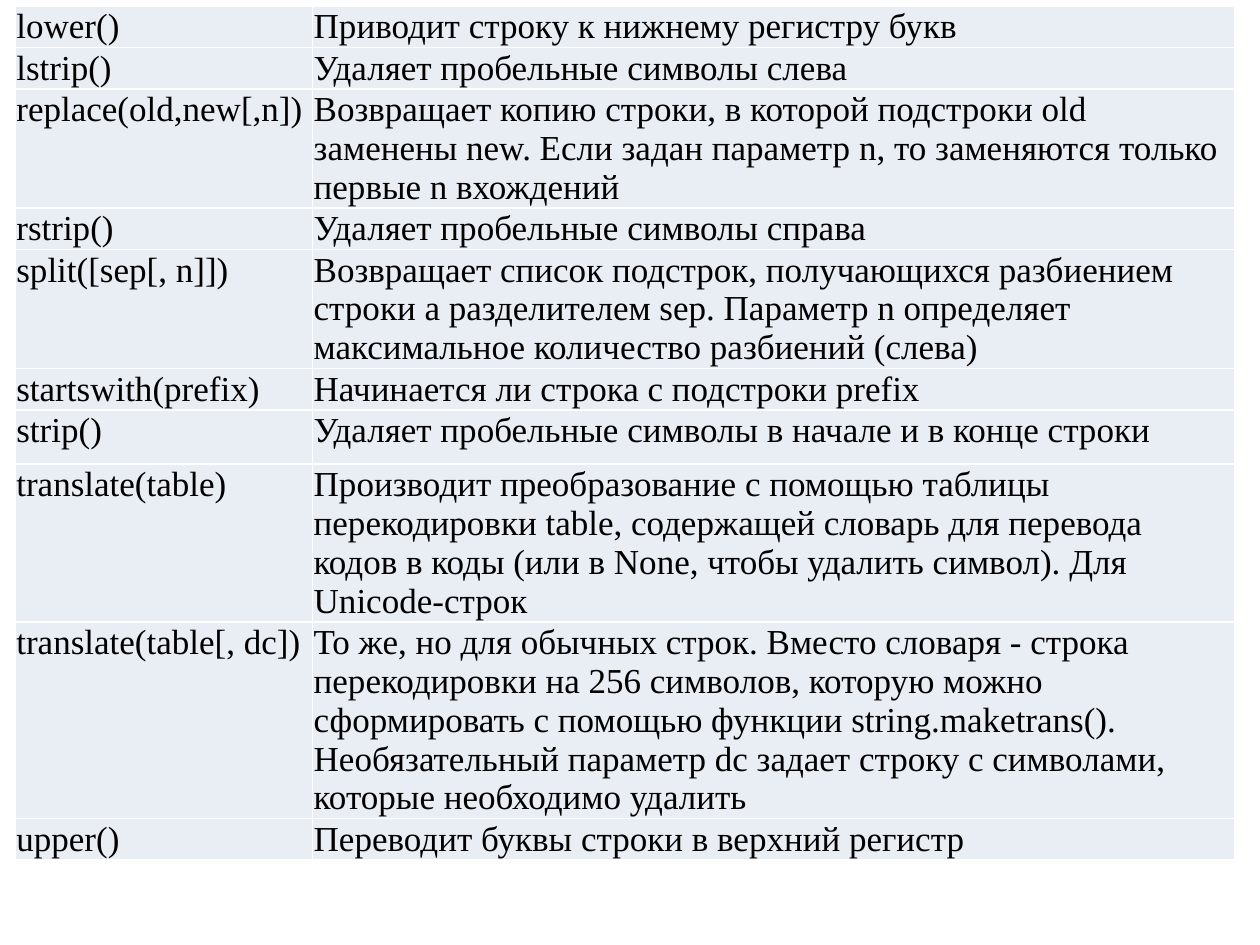
from typing import NamedTuple

from lxml.etree import SubElement
from pptx import Presentation
from pptx.dml.color import RGBColor
from pptx.oxml.ns import qn
from pptx.util import Inches, Pt

COLORS = {"text": "000000", "fill": "E9EDF4", "line": "FFFFFF"}
FONT = {"name": "Times New Roman", "size": Pt(20), "bold": False}
INSET = {f"margin_{side}": Inches(0.01) for side in ("left", "top", "right", "bottom")}
FLAGS = {"first_row": False, "horz_banding": False}
FRAME = {"left": Inches(0.12), "top": Inches(0.05),
         "width": Inches(9.69), "height": Inches(7.29)}
WIDTHS = (2.36, 7.32)


class Method(NamedTuple):
    """A string method, what it does, and its row height in inches."""
    name: str
    text: str
    height: float = 0.23


METHODS = [
    Method("lower()", "Приводит строку к нижнему регистру букв"),
    Method("lstrip()", "Удаляет пробельные символы слева"),
    Method("replace(old,new[,n])",
           "Возвращает копию строки, в которой подстроки old заменены new. "
           "Если задан параметр n, то заменяются только первые n вхождений", 0.64),
    Method("rstrip()", "Удаляет пробельные символы справа"),
    Method("split([sep[, n]])",
           "Возвращает список подстрок, получающихся разбиением строки a "
           "разделителем sep. Параметр n определяет максимальное количество "
           "разбиений (слева)", 0.84),
    Method("startswith(prefix)", "Начинается ли строка с подстроки prefix"),
    Method("strip()", "Удаляет пробельные символы в начале и в конце строки", 0.43),
    Method("translate(table)",
           "Производит преобразование с помощью таблицы перекодировки table, "
           "содержащей словарь для перевода кодов в коды (или в None, чтобы "
           "удалить символ). Для Unicode-строк", 0.84),
    Method("translate(table[, dc])",
           "То же, но для обычных строк. Вместо словаря - строка перекодировки "
           "на 256 символов, которую можно сформировать с помощью функции "
           "string.maketrans(). Необязательный параметр dc задает строку с "
           "символами, которые необходимо удалить", 1.05),
    Method("upper()", "Переводит буквы строки в верхний регистр"),
]


def apply(target, values: dict) -> None:
    """Set each named value on the target."""
    for key, value in values.items():
        setattr(target, key, value)


def border(cell) -> None:
    """Draw a thin line on all four sides of a cell."""
    props = cell._tc.get_or_add_tcPr()
    for spot, side in enumerate(("lnL", "lnR", "lnT", "lnB")):
        line = SubElement(props, qn(f"a:{side}"), w=str(Pt(1)))
        solid = SubElement(line, qn("a:solidFill"))
        SubElement(solid, qn("a:srgbClr"), val=COLORS["line"])
        props.insert(spot, line)


def write(cell, text: str) -> None:
    """Fill one cell with styled text."""
    apply(cell, INSET)
    cell.fill.solid()
    cell.fill.fore_color.rgb = RGBColor.from_string(COLORS["fill"])
    border(cell)
    run = cell.text_frame.paragraphs[0].add_run()
    run.text = text
    apply(run.font, FONT)
    run.font.color.rgb = RGBColor.from_string(COLORS["text"])


def draw(slide, methods: list[Method]) -> None:
    """Add the table of string methods."""
    frame = slide.shapes.add_table(len(methods), len(WIDTHS), **FRAME)
    table = frame.table
    apply(table, FLAGS)
    for column, width in zip(table.columns, WIDTHS):
        column.width = Inches(width)
    for row, method in zip(table.rows, methods):
        row.height = Inches(method.height)
        for cell, text in zip(row.cells, (method.name, method.text)):
            write(cell, text)
    apply(frame, FRAME)


def main() -> None:
    """Build and save the slide."""
    deck = Presentation()
    apply(deck, {"slide_width": Inches(10), "slide_height": Inches(7.5)})
    draw(deck.slides.add_slide(deck.slide_layouts[6]), METHODS)
    deck.save("out.pptx")


if __name__ == "__main__":
    main()
